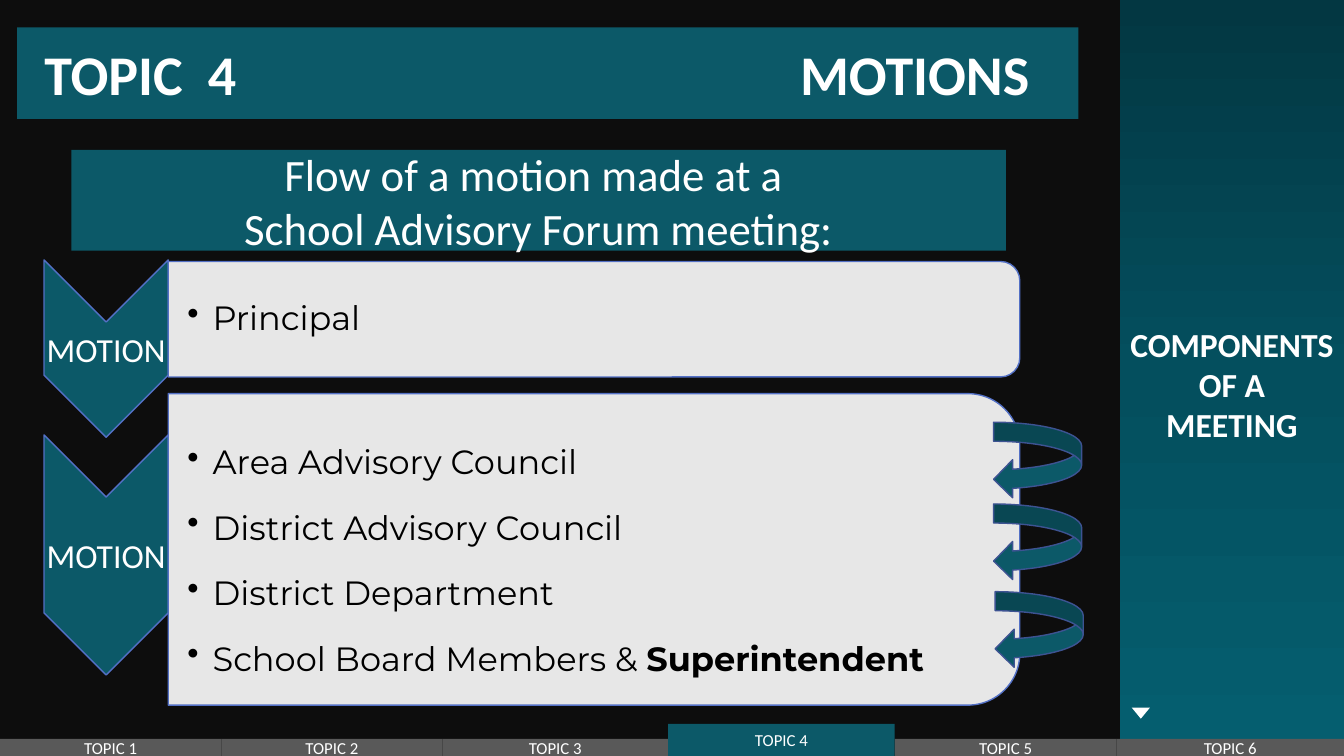
import copy
from dataclasses import dataclass

import lxml.etree
import pptx
import pptx.dml.color
import pptx.enum.shapes
import pptx.enum.text
import pptx.oxml.ns
import pptx.util

Cm = pptx.util.Cm
Pt = pptx.util.Pt
SHAPE = pptx.enum.shapes.MSO_SHAPE
ALIGN = pptx.enum.text.PP_ALIGN
ANCHOR = pptx.enum.text.MSO_ANCHOR
qn = pptx.oxml.ns.qn


@dataclass(frozen=True)
class Theme:
    background: str = "0D0D0D"
    teal: str = "0C5968"
    tab: str = "595959"
    white: str = "FFFFFF"
    black: str = "000000"
    outline: str = "5370C5"
    arrow_outline: str = "3D5392"
    sidebar: tuple = ("033742", "044F5E", "055E6F")
    font: str = "Calibri"
    list_font: str = "Montserrat"
    title: int = 40
    subtitle: int = 32
    body: int = 24
    tab_size: int = 12


T = Theme()


def rgb(value):
    return pptx.dml.color.RGBColor.from_string(value)


def add_shape(s, kind, box, fill, line=None, rotation=0):
    left, top, width, height = box
    if rotation == 90:
        left, top = left + (width - height) / 2, top + (height - width) / 2
        width, height = height, width
    sp = s.shapes.add_shape(kind, Cm(left), Cm(top), Cm(width), Cm(height))
    sp.rotation = rotation
    sp.shadow.inherit = False
    sp.fill.solid()
    sp.fill.fore_color.rgb = rgb(fill)
    if line:
        sp.line.color.rgb = rgb(line)
        sp.line.width = Pt(1)
    else:
        sp.line.fill.background()
    return sp


def add_box(s, box):
    return s.shapes.add_textbox(*(Cm(v) for v in box))


def frame(sp, left=0, top=0):
    tf = sp.text_frame
    tf.word_wrap = True
    tf.vertical_anchor = ANCHOR.MIDDLE
    tf.margin_left, tf.margin_top = Cm(left), Cm(top)
    tf.margin_right = tf.margin_bottom = 0
    return tf


def add_run(p, text, size, color=T.white, font=T.font, bold=False):
    r = p.add_run()
    r.text = text
    r.font.size = Pt(size)
    r.font.name = font
    r.font.bold = bold
    r.font.color.rgb = rgb(color)


def add_lines(tf, lines, size, bold=False):
    for i, text in enumerate(lines):
        p = tf.add_paragraph() if i else tf.paragraphs[0]
        p.alignment = ALIGN.CENTER
        add_run(p, text, size, bold=bold)


def title_bar(s, box, topic, heading):
    inset = 0.69
    tf = frame(add_shape(s, SHAPE.RECTANGLE, box, T.teal), left=inset)
    p = tf.paragraphs[0]
    p.alignment = ALIGN.LEFT
    tabs = lxml.etree.SubElement(p._p.get_or_add_pPr(), qn("a:tabLst"))
    stop = Cm(box[2] - 2 * inset - 0.55)
    lxml.etree.SubElement(tabs, qn("a:tab"), pos=str(stop), algn="r")
    add_run(p, f"{topic}\t{heading}", T.title, bold=True)


def subtitle_bar(s, box, lines):
    add_lines(frame(add_shape(s, SHAPE.RECTANGLE, box, T.teal)), lines, T.subtitle)


def sidebar(s, box, lines):
    sp = add_shape(s, SHAPE.RECTANGLE, box, T.teal)
    sp.fill.gradient()
    sp.fill.gradient_angle = 270
    stops = sp.element.xpath(".//a:gsLst")[0]
    stops.insert(1, copy.deepcopy(stops[0]))
    for i, (stop, color) in enumerate(zip(sp.fill.gradient_stops, T.sidebar)):
        stop.position = i / 2
        stop.color.rgb = rgb(color)
    add_lines(frame(sp, top=0.69), lines, T.body, bold=True)
    marker = (box[0] + 0.3, box[1] + 17.83, 0.46, 0.28)
    add_shape(s, SHAPE.ISOSCELES_TRIANGLE, marker, T.white, rotation=180)


def topic_tabs(s, box, edges, current):
    left, top, width, height = box
    for n, (start, end) in enumerate(zip(edges, edges[1:]), 1):
        rise, color = (0.38, T.teal) if n == current else (0, T.tab)
        tab = (left + start, top - rise, end - start, height + rise)
        tf = frame(add_shape(s, SHAPE.RECTANGLE, tab, color))
        add_lines(tf, [f"TOPIC {n}"], T.tab_size)


def motion_chevron(s, box):
    add_shape(s, SHAPE.CHEVRON, box, T.teal, T.outline, 90)
    add_lines(frame(add_box(s, box)), ["MOTION"], T.body)


def recipient_panel(s, box, items, spacing):
    panel = add_shape(s, SHAPE.ROUND_2_SAME_RECTANGLE, box, T.white, T.outline, 90)
    color = panel.element.xpath("./p:spPr/a:solidFill/a:srgbClr")[0]
    lxml.etree.SubElement(color, qn("a:alpha"), val="90000")
    tf = frame(add_box(s, box), left=0.48)
    for i, runs in enumerate(items):
        p = tf.add_paragraph() if i else tf.paragraphs[0]
        pPr = p._p.get_or_add_pPr()
        pPr.set("marL", str(Cm(0.64)))
        pPr.set("indent", str(Cm(-0.64)))
        lxml.etree.SubElement(pPr, qn("a:buChar"), char="•")
        p.line_spacing = spacing
        p.space_after = Pt(3.6)
        for text, bold in runs:
            add_run(p, text, T.body, T.black, T.list_font, bold)


def loop_arrows(s, box, offsets):
    left, top, width, height = box
    for dx, dy in offsets:
        arrow = (left + dx, top + dy, width, height)
        add_shape(s, SHAPE.CURVED_LEFT_ARROW, arrow, T.teal, T.arrow_outline)


def main():
    prs = pptx.Presentation()
    prs.slide_width, prs.slide_height = Cm(33.87), Cm(19.05)
    s = prs.slides.add_slide(prs.slide_layouts[6])
    s.background.fill.solid()
    s.background.fill.fore_color.rgb = rgb(T.background)

    subtitle_bar(s, (1.8, 3.78, 23.55, 2.54),
                 ["Flow of a motion made at a ", "School Advisory Forum meeting:"])
    title_bar(s, (0.43, 0.69, 26.75, 2.31), "TOPIC  4", "MOTIONS")
    sidebar(s, (28.22, 0, 5.65, 18.67), ["COMPONENTS", "OF A", "MEETING"])
    topic_tabs(s, (0, 18.62, 33.87, 0.43),
               (0, 5.58, 11.15, 16.84, 22.55, 28.14, 33.87), current=4)

    motion_chevron(s, (1.11, 6.55, 3.13, 4.47))
    recipient_panel(s, (4.24, 6.59, 21.46, 2.91), [[("Principal", False)]], 0.9)
    motion_chevron(s, (1.11, 10.96, 3.13, 6.05))
    recipient_panel(s, (4.24, 9.92, 21.46, 7.85), [
        [("Area Advisory Council", False)],
        [("District Advisory Council", False)],
        [("District Department", False)],
        [("School Board Members & ", False), ("Superintendent", True)],
    ], 1.5)
    loop_arrows(s, (25.04, 10.64, 2.22, 1.92), ((0, 0), (0, 2.06), (0.04, 4.27)))
    prs.save("out.pptx")


if __name__ == "__main__":
    main()
